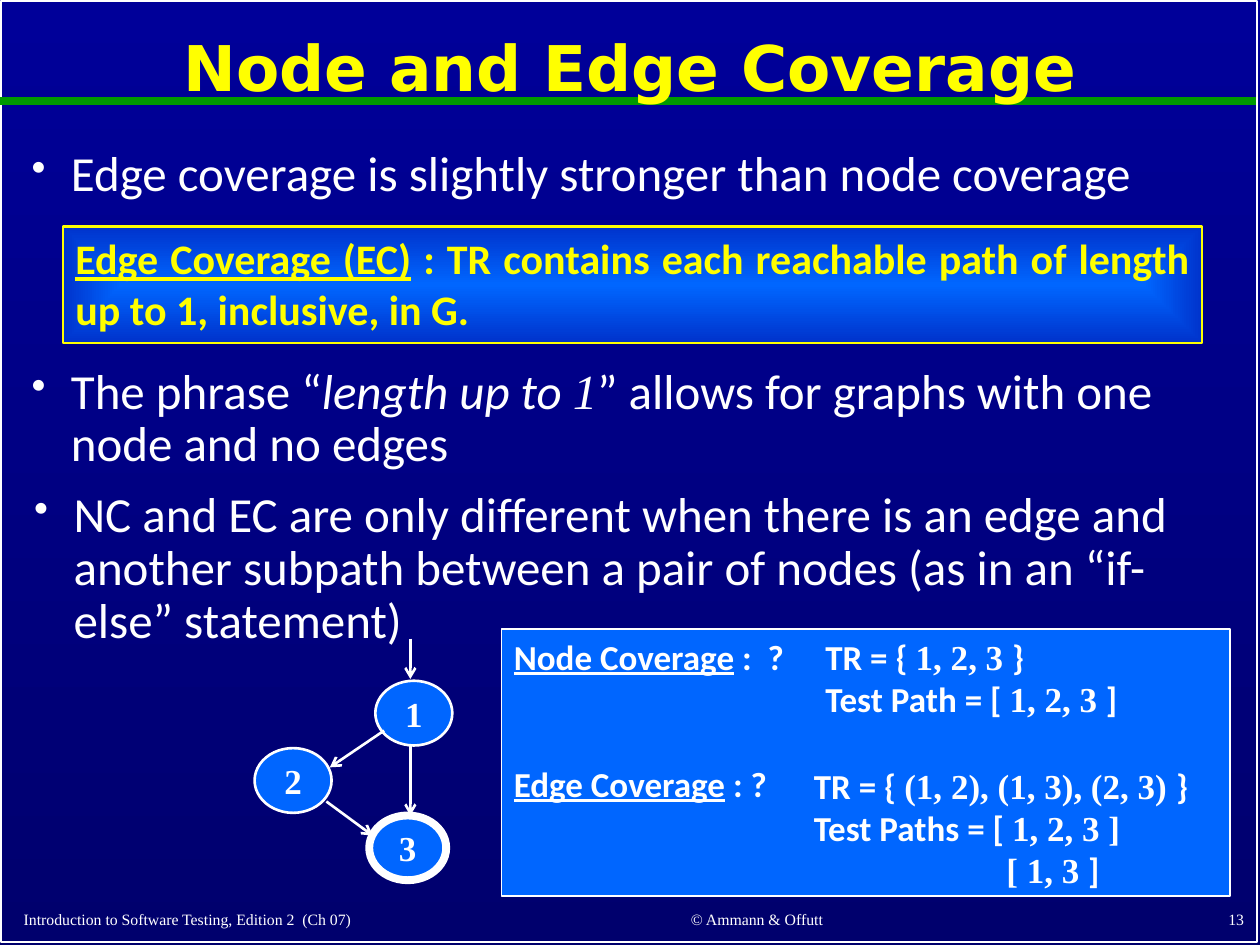
from typing import NamedTuple

from lxml import etree
from pptx import Presentation
from pptx import util as u
from pptx.dml.color import RGBColor
from pptx.enum import shapes, text
from pptx.oxml import parse_xml
from pptx.oxml.ns import nsdecls, qn

COLORS = {
    "top": "000099", "bottom": "00006D", "rule": "009900", "white": "FFFFFF",
    "yellow": "FFFF00", "blue": "0066FF", "deep": "0033CC",
}
SANS, SERIF, HEADING = "Calibri", "Times New Roman", "DejaVu Sans"
LEFT, CENTER, RIGHT, JUSTIFY = (
    text.PP_ALIGN.LEFT, text.PP_ALIGN.CENTER, text.PP_ALIGN.RIGHT, text.PP_ALIGN.JUSTIFY)
TOP, MIDDLE, BOTTOM = text.MSO_ANCHOR.TOP, text.MSO_ANCHOR.MIDDLE, text.MSO_ANCHOR.BOTTOM
BULLET_INDENT = 22.5


class Box(NamedTuple):
    x: float
    y: float
    w: float
    h: float


class Run(NamedTuple):
    text: str
    font: str = SANS
    underline: bool = False
    italic: bool = False


class Para(NamedTuple):
    runs: list[Run]
    align: text.PP_ALIGN = LEFT
    line: float = 1.0
    before: float = 0
    indent: float = 0
    bullet: bool = False


class Style(NamedTuple):
    size: float
    color: str = "white"
    bold: bool = False


class Node(NamedTuple):
    label: str
    x: float
    y: float
    border: float = 1.5


class Arrow(NamedTuple):
    x1: float
    y1: float
    x2: float
    y2: float


def rgb(name: str) -> RGBColor:
    return RGBColor.from_string(COLORS[name])


def set_gradient(fill, first: str, last: str) -> None:
    fill.gradient()
    for stop, name in zip(fill.gradient_stops, (first, last)):
        stop.color.rgb = rgb(name)


def write(tf, paras: list[Para], style: Style, anchor=TOP) -> None:
    tf.word_wrap = True
    tf.vertical_anchor = anchor
    for i, para in enumerate(paras):
        p = tf.paragraphs[0] if i == 0 else tf.add_paragraph()
        p.alignment, p.line_spacing = para.align, para.line
        p.space_before = u.Pt(para.before)
        pPr = p._p.get_or_add_pPr()
        pPr.set("marL", str(u.Pt(para.indent)))
        if para.bullet:
            pPr.set("indent", str(-u.Pt(para.indent)))
            etree.SubElement(pPr, qn("a:buSzPct")).set("val", "85000")
            etree.SubElement(pPr, qn("a:buChar")).set("char", "•")
        for run in para.runs:
            r = p.add_run()
            r.text = run.text
            f = r.font
            f.name, f.size, f.bold = run.font, u.Pt(style.size), style.bold
            f.italic, f.underline = run.italic, run.underline
            f.color.rgb = rgb(style.color)


def add_text(s, box: Box, paras: list[Para], style: Style, anchor=TOP) -> None:
    sp = s.shapes.add_textbox(*map(u.Pt, box))
    write(sp.text_frame, paras, style, anchor)


def add_panel(s, kind, box: Box, border: float, line: str = "white", fill: str | None = "blue"):
    sp = s.shapes.add_shape(kind, *map(u.Pt, box))
    sp.shadow.inherit = False
    if fill:
        sp.fill.solid()
        sp.fill.fore_color.rgb = rgb(fill)
    else:
        sp.fill.background()
    sp.line.color.rgb = rgb(line)
    sp.line.width = u.Pt(border)
    return sp


def add_line(s, ends: Arrow, width: float, color: str = "white", arrow: bool = True) -> None:
    cx = s.shapes.add_connector(shapes.MSO_CONNECTOR.STRAIGHT, *map(u.Pt, ends))
    cx.line.color.rgb = rgb(color)
    cx.line.width = u.Pt(width)
    if arrow:
        etree.SubElement(cx.line._get_or_add_ln(), qn("a:tailEnd")).set("type", "arrow")
    etree.SubElement(cx._element.spPr, qn("a:effectLst"))


def center_gradient(sp, inner: str, outer: str) -> None:
    """Fill a shape with a gradient that spreads from its centre."""
    set_gradient(sp.fill, inner, outer)
    lin = sp._element.spPr.find(qn("a:gradFill")).find(qn("a:lin"))
    lin.getparent().replace(lin, parse_xml(
        f'<a:path {nsdecls("a")} path="shape">'
        '<a:fillToRect l="50000" t="50000" r="50000" b="50000"/></a:path>'))


FOOTERS = [
    (Box(6.5, 512.5, 296.5, 21.5), "Introduction to Software Testing, Edition 2  (Ch 07)", LEFT),
    (Box(318.5, 512, 228, 22), "© Ammann & Offutt", CENTER),
    (Box(568, 511.5, 150, 22.5), "13", RIGHT),
]
BULLETS = [
    (Box(11, 81.5, 698, 37.5), [Run("Edge coverage is slightly stronger than node coverage")]),
    (Box(11, 206, 698, 60), [
        Run("The phrase “"), Run("length up to ", italic=True), Run("1", SERIF, italic=True),
        Run("” allows for graphs with one node and no edges")]),
    (Box(12.5, 276.5, 698, 60), [
        Run("NC and EC are only different when there is an edge and another subpath "
            "between a pair of nodes (as in an “if-else” statement)")]),
]
NODES = [Node("2", 145.5, 427.5), Node("3", 211, 466, 4.5), Node("1", 214.5, 389)]
NODE_W, NODE_H = 44, 37
ARROWS = [
    Arrow(219.5, 417.5, 188.5, 438.5), Arrow(186.5, 458, 213, 477.5),
    Arrow(234.5, 426, 234.5, 466), Arrow(234.5, 365, 234.5, 388),
]
QUESTIONS = [
    Para([Run("Node Coverage", underline=True), Run(" :  ?")]),
    Para([Run("Edge Coverage", underline=True), Run(" : ?")], before=48.5),
]
ANSWERS = [
    (Box(464.5, 359.5, 214, 55.5), [
        Para([Run("TR = { "), Run("1, 2, 3 ", SERIF), Run("}")]),
        Para([Run("Test Path = [ "), Run("1, 2, 3 ", SERIF), Run("]")])]),
    (Box(458, 433.5, 250, 80), [
        Para([Run("TR = { "), Run("(1, 2), (1, 3), (2, 3) ", SERIF), Run("}")]),
        Para([Run("Test Paths = [ "), Run("1, 2, 3 ]", SERIF)]),
        Para([Run("[ 1, 3 ", SERIF), Run("]")], indent=110)]),
]


def main() -> None:
    prs = Presentation()
    prs.slide_width, prs.slide_height = u.Pt(720), u.Pt(540)
    s = prs.slides.add_slide(prs.slide_layouts[6])
    set_gradient(s.background.fill, "top", "bottom")
    s.background.fill.gradient_angle = 270

    rect, oval = shapes.MSO_SHAPE.RECTANGLE, shapes.MSO_SHAPE.OVAL
    add_panel(s, rect, Box(0.5, 0.5, 718, 538), 1, fill=None)
    add_line(s, Arrow(0, 57.5, 718, 57.5), 4.5, "rule", arrow=False)
    for box, label, align in FOOTERS:
        add_text(s, box, [Para([Run(label, SERIF)], align)], Style(9), BOTTOM)
    add_text(s, Box(54, 8, 612, 65),
             [Para([Run("Node and Edge Coverage", HEADING)], CENTER, 0.9)],
             Style(36, "yellow", True), MIDDLE)
    for box, runs in BULLETS:
        add_text(s, box, [Para(runs, line=0.9, indent=BULLET_INDENT, bullet=True)], Style(28))

    definition = add_panel(s, rect, Box(36, 129.5, 651, 66.5), 1.5, "yellow")
    center_gradient(definition, "blue", "deep")
    write(definition.text_frame, [Para([
        Run("Edge Coverage (EC)", underline=True),
        Run(" : TR contains each reachable path of length up to 1, inclusive, in G.")], JUSTIFY)],
        Style(24, "yellow", True))

    label_style = Style(20, bold=True)
    questions = add_panel(s, rect, Box(286.5, 359.5, 416.5, 152.5), 1)
    write(questions.text_frame, QUESTIONS, label_style)
    for node in NODES:
        sp = add_panel(s, oval, Box(node.x, node.y, NODE_W, NODE_H), node.border)
        tf = sp.text_frame
        tf.margin_left = tf.margin_right = tf.margin_top = tf.margin_bottom = 0
        write(tf, [Para([Run(node.label, SERIF)], CENTER)], label_style, MIDDLE)
    for arrow in ARROWS:
        add_line(s, arrow, 1.5)
    for box, paras in ANSWERS:
        add_text(s, box, paras, label_style)
    prs.save("out.pptx")


if __name__ == "__main__":
    main()
